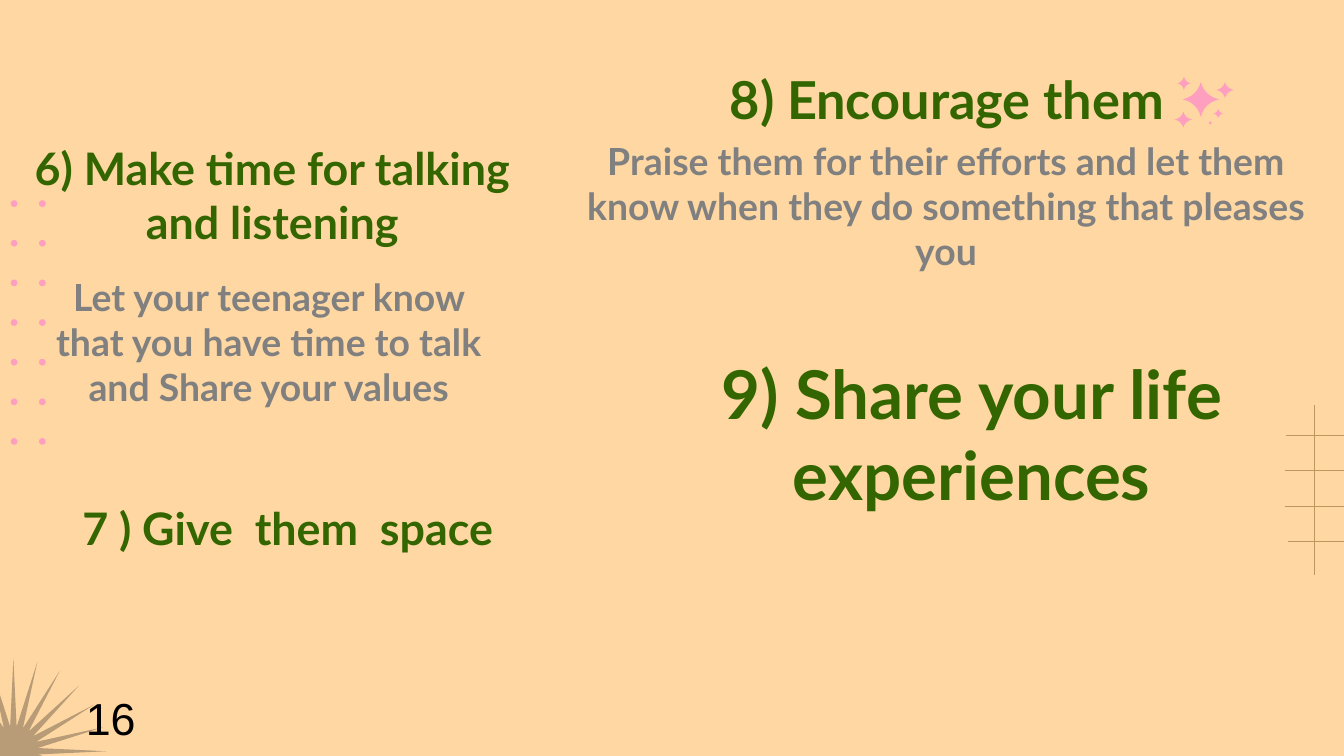
from dataclasses import dataclass
from lxml import etree
from pptx import Presentation
from pptx.dml.color import RGBColor
from pptx.enum.shapes import MSO_CONNECTOR, MSO_SHAPE
from pptx.enum.text import MSO_ANCHOR, MSO_AUTO_SIZE, PP_ALIGN
from pptx.oxml.ns import qn
from pptx.util import Inches, Pt

LINE = MSO_CONNECTOR.STRAIGHT
OVAL, STAR = MSO_SHAPE.OVAL, MSO_SHAPE.STAR_24_POINT
MIDDLE, TOP = MSO_ANCHOR.MIDDLE, MSO_ANCHOR.TOP
CENTER, LEFT = PP_ALIGN.CENTER, PP_ALIGN.LEFT
FIT = MSO_AUTO_SIZE.SHAPE_TO_FIT_TEXT


@dataclass(frozen=True)
class Theme:
    back: str = "FFD7A2"
    pink: str = "FF9FBF"
    rule: str = "C0965F"
    star: str = "B89B77"
    head: str = "336600"
    body: str = "808080"
    ink: str = "000000"
    font: str = "Lato"
    plain: str = "Arial"
    small: int = 20
    mid: int = 24
    big: int = 28
    huge: int = 36


THEME = Theme()

# text, box, size, colour
TIPS = [
    ("Let your teenager know that you have time to talk and Share your values",
     (0.18, 2.47, 3.64, 0.14), THEME.small, THEME.body),
    ("6) Make time for talking and listening",
     (-0.1, 1.17, 4.25, 0.56), THEME.mid, THEME.head),
    ("8) Encourage them", (5.28, 0.55, 3.53, 0.37), THEME.big, THEME.head),
    ("7 ) Give  them  space", (0.45, 3.76, 3.38, 0.33), THEME.mid, THEME.head),
    ("Praise them for their efforts and let them know when they do something "
     "that pleases you", (4.11, 1.33, 5.86, 0.4), THEME.small, THEME.body),
    ("9) Share your life experiences",
     (5.17, 2.61, 4.12, 1.23), THEME.huge, THEME.head),
]

# left, top, width, height
SPARKS = [
    (8.8, 0.61, 0.27, 0.26), (9.05, 0.61, 0.13, 0.12), (8.76, 0.57, 0.1, 0.1),
    (9.03, 0.81, 0.07, 0.07), (8.99, 0.9, 0.03, 0.03), (8.74, 0.83, 0.13, 0.12),
]


def paint(shape, color):
    shape.shadow.inherit = False
    shape.fill.solid()
    shape.fill.fore_color.rgb = RGBColor.from_string(color)
    shape.line.fill.background()


def add_solid(shapes, kind, box, color):
    shape = shapes.add_shape(kind, *map(Inches, box))
    paint(shape, color)
    return shape


def add_rule(shapes, x1, y1, x2, y2):
    rule = shapes.add_connector(LINE, *map(Inches, (x1, y1, x2, y2)))
    rule.line.color.rgb = RGBColor.from_string(THEME.rule)
    rule.line.width = Pt(0.75)
    etree.SubElement(rule._element.spPr, qn("a:effectLst"))


def add_spark(shapes, box, steps=6):
    """Draw a four-point star whose sides bend in towards its centre."""
    left, top, width, height = box
    tips = [(0.5, 0), (0, 0.5), (0.5, 1), (1, 0.5)]
    bends = [(0.4, 0.4), (0.4, 0.6), (0.6, 0.6), (0.6, 0.4)]
    points = []
    for i, (start, bend) in enumerate(zip(tips, bends)):
        end = tips[(i + 1) % 4]
        for t in (k / steps for k in range(steps)):
            x, y = ((1 - t) ** 2 * a + 2 * t * (1 - t) * b + t * t * c
                    for a, b, c in zip(start, bend, end))
            points.append((Inches(left + x * width), Inches(top + y * height)))
    builder = shapes.build_freeform(*points[0])
    builder.add_line_segments(points[1:], close=True)
    paint(builder.convert_to_shape(), THEME.pink)


def add_text(shapes, text, box, size, color, font=THEME.font, bold=True,
             align=CENTER, anchor=MIDDLE, wrap=True):
    area = shapes.add_textbox(*map(Inches, box))
    frame = area.text_frame
    frame.text = text
    frame.word_wrap = wrap
    frame.vertical_anchor = anchor
    para = frame.paragraphs[0]
    para.alignment = align
    style = para.runs[0].font
    style.name, style.size, style.bold = font, Pt(size), bold
    style.color.rgb = RGBColor.from_string(color)
    return frame


def add_tip(shapes, tip):
    frame = add_text(shapes, *tip)
    frame.margin_left = frame.margin_right = Inches(0.1)
    frame.margin_top = frame.margin_bottom = Inches(0.1)


def add_dots(shapes):
    first, last, rows = 1.49, 3.26, 7
    gap = (last - first) / (rows - 1)
    for x in (0.29, 0.08):
        for row in range(rows):
            box = (x, first + row * gap, 0.05, 0.05)
            add_solid(shapes, OVAL, box, THEME.pink)


def add_grid(shapes):
    add_rule(shapes, 9.78, 3.01, 9.78, 4.28)
    first, last = 3.24, 4.03
    lefts = (9.57, 9.56, 9.56, 9.58)
    gap = (last - first) / (len(lefts) - 1)
    for row, x in enumerate(lefts):
        y = first + row * gap
        add_rule(shapes, x, y, x + 1.23, y)


def main():
    deck = Presentation()
    deck.slide_width = Inches(10)
    deck.slide_height = deck.slide_width * 9 // 16
    slide = deck.slides.add_slide(deck.slide_layouts[6])
    back = slide.background.fill
    back.solid()
    back.fore_color.rgb = RGBColor.from_string(THEME.back)
    shapes = slide.shapes

    add_dots(shapes.add_group_shape().shapes)
    add_grid(shapes.add_group_shape().shapes)
    star = add_solid(shapes, STAR, (-0.59, 4.9, 1.38, 1.38), THEME.star)
    star.adjustments[0] = 0.133
    for tip in TIPS:
        add_tip(shapes, tip)
    sparks = shapes.add_group_shape().shapes
    for box in SPARKS:
        add_spark(sparks, box)
    number = add_text(shapes, "16", (0.54, 5.09, 0.58, 0.5), THEME.mid,
                      THEME.ink, THEME.plain, False, LEFT, TOP, False)
    number.auto_size = FIT
    deck.save("out.pptx")


if __name__ == "__main__":
    main()
